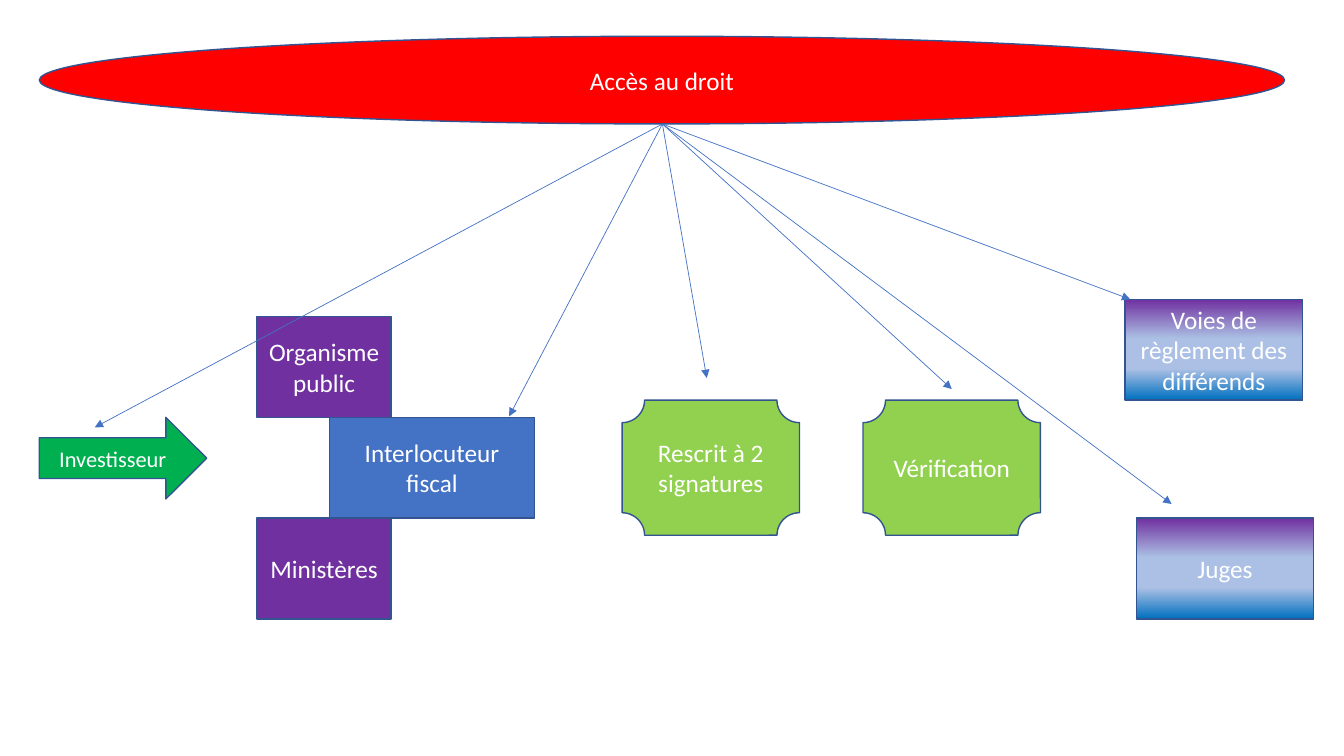
from dataclasses import dataclass

from lxml.etree import SubElement
from pptx import Presentation
from pptx.dml.color import RGBColor
from pptx.enum.shapes import MSO_CONNECTOR, MSO_SHAPE
from pptx.enum.text import MSO_ANCHOR, PP_ALIGN
from pptx.oxml.ns import qn
from pptx.util import Emu, Pt

PX = 9144  # 100 px to the inch


@dataclass(frozen=True)
class Theme:
    font: str = "Calibri"
    body: int = 18
    small: int = 16
    text: str = "FFFFFF"
    outline: str = "325491"
    blue: str = "4472C4"
    red: str = "FF0000"
    green: str = "00B050"
    lime: str = "92D050"
    purple: str = "7030A0"
    fade: tuple = ((0, "7030A0"), (39, "ABC0E4"), (69, "ABC0E4"), (100, "0070C0"))


THEME = Theme()


def px(n):
    return Emu(n * PX)


def fill_gradient(fill, stops):
    fill.gradient()
    fill.gradient_angle = 270  # top to bottom
    gs_list = fill._xPr.find(qn("a:gradFill")).find(qn("a:gsLst"))
    for gs in list(gs_list):
        gs_list.remove(gs)
    for percent, color in stops:
        gs = SubElement(gs_list, qn("a:gs"), pos=str(percent * 1000))
        SubElement(gs, qn("a:srgbClr"), val=color)


def add_node(slide, kind, box, text, fill, size=THEME.body):
    sp = slide.shapes.add_shape(kind, *map(px, box))
    sp.shadow.inherit = False
    if isinstance(fill, tuple):
        fill_gradient(sp.fill, fill)
    else:
        sp.fill.solid()
        sp.fill.fore_color.rgb = RGBColor.from_string(fill)
    sp.line.color.rgb = RGBColor.from_string(THEME.outline)
    sp.line.width = Pt(1)
    tf = sp.text_frame
    tf.word_wrap = True
    tf.vertical_anchor = MSO_ANCHOR.MIDDLE
    p = tf.paragraphs[0]
    p.alignment = PP_ALIGN.CENTER
    r = p.add_run()
    r.text = text
    r.font.name = THEME.font
    r.font.size = Pt(size)
    r.font.color.rgb = RGBColor.from_string(THEME.text)


def add_arrow(slide, start, end):
    cx = slide.shapes.add_connector(MSO_CONNECTOR.STRAIGHT, *map(px, start + end))
    cx.line.color.rgb = RGBColor.from_string(THEME.blue)
    cx.line.width = Pt(0.5)
    SubElement(cx.line._get_or_add_ln(), qn("a:tailEnd"), type="triangle")
    SubElement(cx._element.spPr, qn("a:effectLst"))


def add_banner(slide, box):
    add_node(slide, MSO_SHAPE.OVAL, box, "Accès au droit", THEME.red)


def add_parties(slide, box):
    x, y, w, h = box
    row = h // 3
    # Investor
    add_node(slide, MSO_SHAPE.RIGHT_ARROW, (x, y + row, 166, 81),
             "Investisseur", THEME.green, THEME.small)
    # Tax contact, between the two public bodies
    add_node(slide, MSO_SHAPE.RECTANGLE, (x + w - 203, y + row, 203, row),
             "Interlocuteur fiscal", THEME.blue)
    for i, text in ((0, "Organisme public"), (2, "Ministères")):
        add_node(slide, MSO_SHAPE.RECTANGLE, (x + 216, y + i * row, 133, row),
                 text, THEME.purple)


def add_procedures(slide, box):
    x, y, w, h = box
    plaque_w = 176
    for i, text in enumerate(("Rescrit à 2 signatures", "Vérification")):
        add_node(slide, MSO_SHAPE.PLAQUE, (x + i * (w - plaque_w), y, plaque_w, h),
                 text, THEME.lime)


def add_disputes(slide, box):
    x, y, w, h = box
    node_w, node_h = 176, 100
    for i, text in enumerate(("Voies de règlement des différends", "Juges")):
        add_node(slide, MSO_SHAPE.RECTANGLE,
                 (x + i * (w - node_w), y + i * (h - node_h), node_w, node_h),
                 text, THEME.fade)


def add_access_arrows(slide, banner, targets):
    x, y, w, h = banner
    for target in targets:
        add_arrow(slide, (x + w // 2 + 1, y + h), target)


def main():
    prs = Presentation()
    prs.slide_width, prs.slide_height = px(1333), px(750)
    slide = prs.slides.add_slide(prs.slide_layouts[6])

    banner = (39, 36, 1235, 87)
    add_banner(slide, banner)
    add_parties(slide, (39, 314, 491, 300))
    add_procedures(slide, (617, 397, 415, 134))
    add_disputes(slide, (1116, 297, 187, 317))
    add_access_arrows(slide, banner, (
        (94, 424), (505, 413), (701, 375), (944, 386), (1162, 500), (1121, 297)))

    prs.save("out.pptx")


if __name__ == "__main__":
    main()
